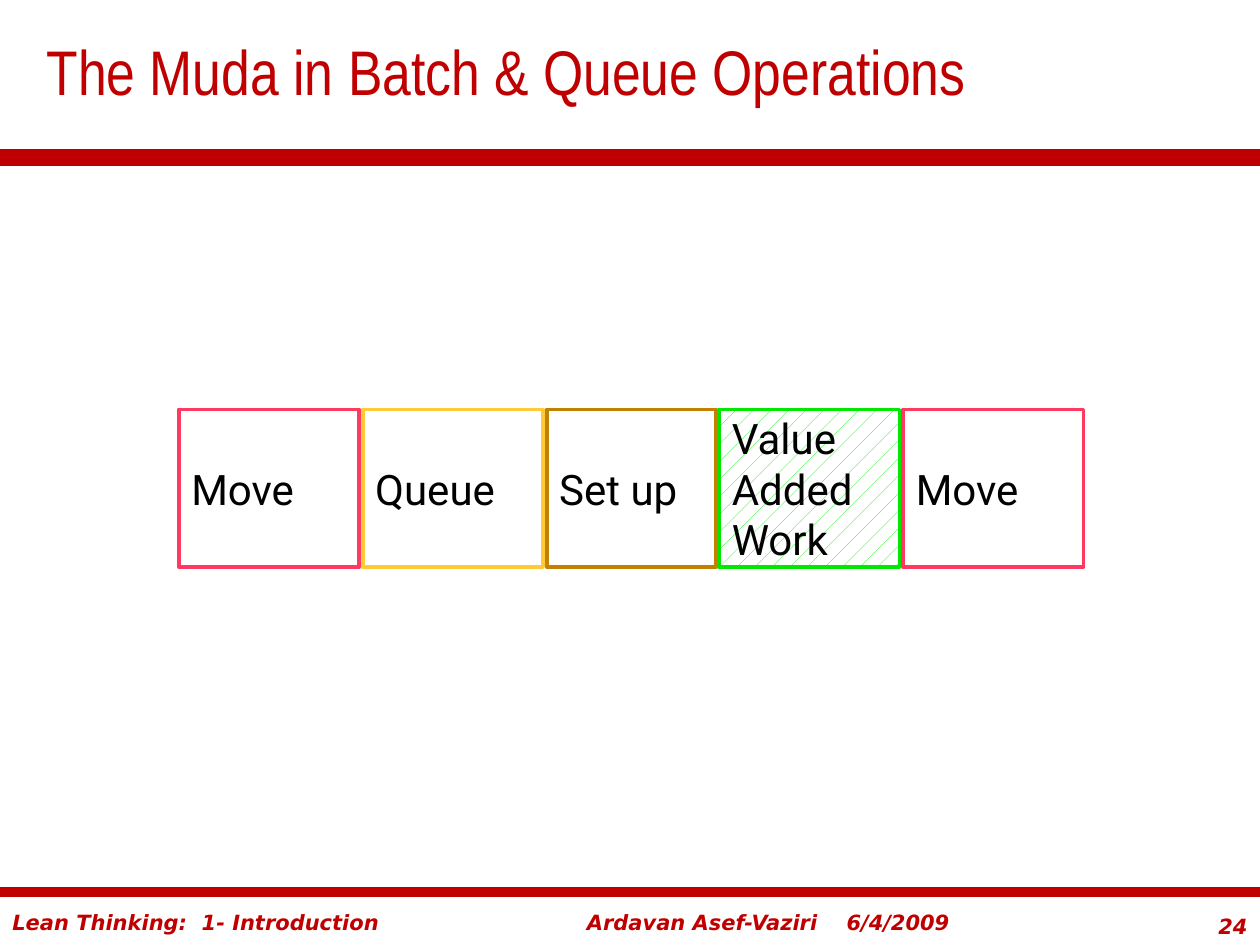
from pptx import Presentation
from pptx.dml.color import RGBColor
from pptx.enum import dml, shapes, text
from pptx.oxml import parse_xml
from pptx.oxml.ns import nsdecls
from pptx.util import Inches, Pt

THEME = {
    "red": "C00000", "ink": "000000", "paper": "FFFFFF",
    "pink": "FF395F", "gold": "FFCA35", "brown": "C28100", "green": "00E800",
    "title": ("Arial Narrow", 36), "step": ("Roboto", 24), "foot": ("DejaVu Sans", 12),
}
TITLE = "The Muda in Batch & Queue Operations"
# label, width, outline, hatched
STEPS = [
    ("Move", 1.43, "pink", False),
    ("Queue", 1.43, "gold", False),
    ("Set up", 1.34, "brown", False),
    ("Value\nAdded\nWork", 1.43, "green", True),
    ("Move", 1.43, "pink", False),
]
LEFT, TOP, HIGH, GAP = 1.42, 3.25, 1.25, 0.03
# y, line width
RULES = [(1.25, 10), (7.08, 6)]
# text, left, top, width, alignment
FOOT = [
    ("Lean Thinking:  1- Introduction", 0, 7.17, 4.5, "LEFT"),
    ("Ardavan Asef-Vaziri", 4.56, 7.17, 2.05, "LEFT"),
    ("6/4/2009", 6.62, 7.17, 1.29, "LEFT"),
    ("24", 9.25, 7.2, 0.75, "RIGHT"),
]


def tint(name):
    return RGBColor.from_string(THEME[name])


def write(frame, words, style, color, align="LEFT", strong=False):
    frame.text = words
    face, size = THEME[style]
    for para in frame.paragraphs:
        para.alignment = getattr(text.PP_ALIGN, align)
        for run in para.runs:
            font = run.font
            font.name, font.size = face, Pt(size)
            font.bold = font.italic = strong
            font.color.rgb = tint(color)


def add_rule(slide, y, width):
    rule = slide.shapes.add_connector(
        shapes.MSO_CONNECTOR.STRAIGHT, 0, Inches(y), Inches(10), Inches(y))
    rule.line.color.rgb = tint("red")
    rule.line.width = Pt(width)
    rule._element.spPr.append(parse_xml(f"<a:effectLst {nsdecls('a')}/>"))


def add_step(slide, left, label, width, color, hatched):
    box = slide.shapes.add_shape(
        shapes.MSO_SHAPE.RECTANGLE,
        Inches(left), Inches(TOP), Inches(width), Inches(HIGH))
    box.shadow.inherit = False
    box.line.color.rgb = tint(color)
    box.line.width = Pt(2.25)
    if hatched:
        box.fill.patterned()
        box.fill.pattern = dml.MSO_PATTERN.PERCENT_5
        box.fill.fore_color.rgb = tint(color)
        box.fill.back_color.rgb = tint("paper")
    else:
        box.fill.background()
    frame = box.text_frame
    frame.word_wrap = False
    frame.vertical_anchor = text.MSO_ANCHOR.MIDDLE
    write(frame, label, "step", "ink")


def main():
    deck = Presentation()
    deck.slide_width, deck.slide_height = Inches(10), Inches(7.5)
    slide = deck.slides.add_slide(deck.slide_layouts[5])

    for words, left, top, width, align in FOOT:
        note = slide.shapes.add_textbox(
            Inches(left), Inches(top), Inches(width), Inches(0.3))
        note.text_frame.word_wrap = True
        write(note.text_frame, words, "foot", "red", align, strong=True)
    for y, width in RULES:
        add_rule(slide, y, width)

    title = slide.shapes.title
    title.left, title.top = Inches(0.27), 0
    title.width, title.height = Inches(9.73), Inches(1.11)
    title.text_frame.vertical_anchor = text.MSO_ANCHOR.MIDDLE
    write(title.text_frame, TITLE, "title", "red")

    left = LEFT
    for label, width, color, hatched in STEPS:
        add_step(slide, left, label, width, color, hatched)
        left += width + GAP

    deck.save("out.pptx")


if __name__ == "__main__":
    main()
